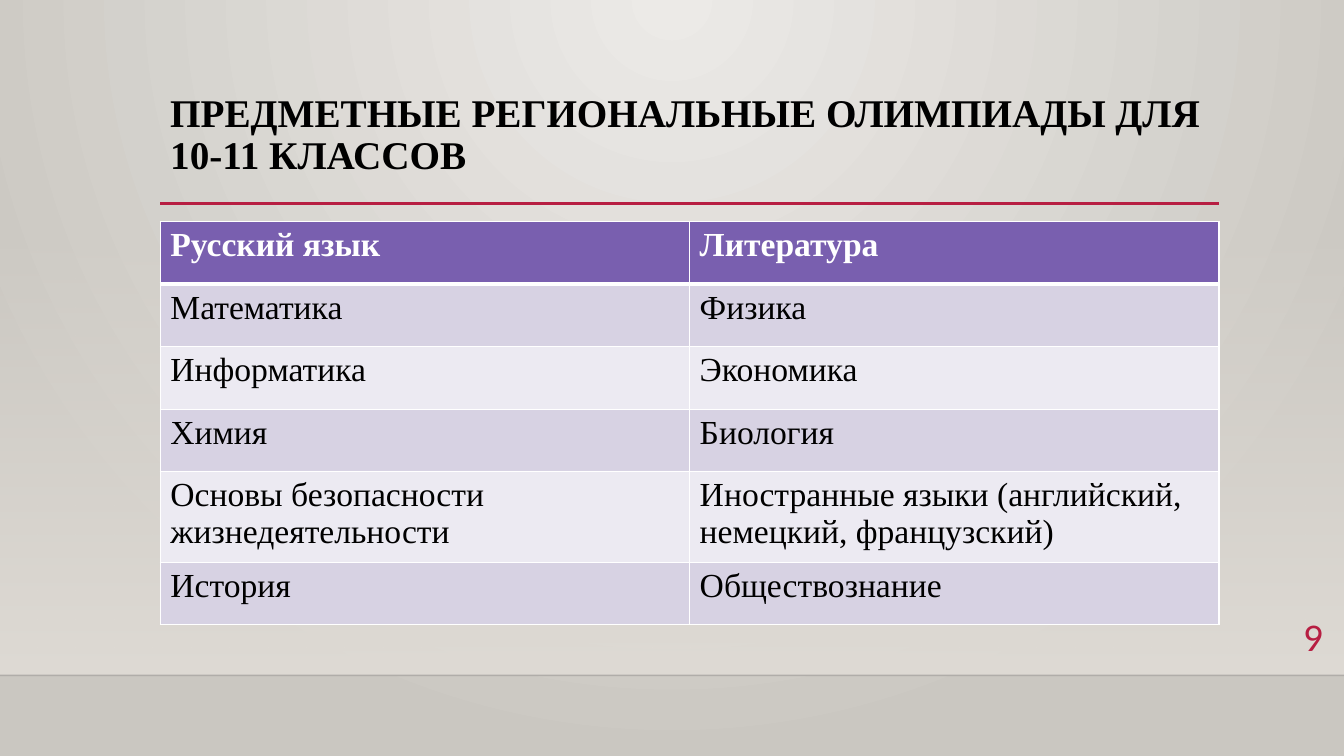
import pptx
import pptx.dml.color
import pptx.enum.shapes
import pptx.enum.text
import pptx.oxml
import pptx.oxml.ns
import pptx.util
from pptx.util import Inches

TITLE = "ПРЕДМЕТНЫЕ РЕГИОНАЛЬНЫЕ ОЛИМПИАДЫ ДЛЯ 10-11 КЛАССОВ"
SUBJECTS = [
    ("Русский язык", "Литература"),
    ("Математика", "Физика"),
    ("Информатика", "Экономика"),
    ("Химия", "Биология"),
    ("Основы безопасности жизнедеятельности",
     "Иностранные языки (английский, немецкий, французский)"),
    ("История", "Обществознание"),
]
PAGE_NUMBER = "9"

COLORS = {
    "center": "ECEAE7", "edge": "CAC7C1", "haze": "DFDBD5",
    "floor": "000001", "accent": "B71E42", "text": "000000",
    "white": "FFFFFF", "header": "795FAF", "odd": "D7D2E3", "even": "ECEAF2",
}
SERIF = "Times New Roman"
SLIDE_WIDTH, SLIDE_HEIGHT = 13.33, 7.5
LEFT, CONTENT_WIDTH = 1.59, 10.5
HAZE_TOP, FLOOR_TOP = 2.21, 6.7
ROW_HEIGHT = 0.62
HEADER_RULE, CELL_RULE = 3, 1


def rgb(name):
    return pptx.dml.color.RGBColor.from_string(COLORS[name])


def xml(text):
    return pptx.oxml.parse_xml(text.replace(" ", f" {pptx.oxml.ns.nsdecls('a')} ", 1))


def set_gradient(fill, stops, direction):
    """Fill with (position, colour, opacity) stops, all in percent."""
    fill.gradient()
    gradient = fill._fill._gradFill
    stop_xml = "".join(
        f'<a:gs pos="{position * 1000}"><a:srgbClr val="{COLORS[color]}">'
        f'<a:alpha val="{opacity * 1000}"/></a:srgbClr></a:gs>'
        for position, color, opacity in stops)
    source = xml(f'<a:gradFill rotWithShape="1"><a:gsLst>{stop_xml}</a:gsLst>'
                 f'{direction}</a:gradFill>')
    gradient.getparent().replace(gradient, source)


def write(frame, text, size, color, font=SERIF, bold=False, align=None, spacing=None):
    frame.word_wrap = True
    para = frame.paragraphs[0]
    para.alignment = align
    para.line_spacing = spacing
    span = para.add_run()
    span.text = text
    span.font.size = pptx.util.Pt(size)
    span.font.name = font
    span.font.bold = bold
    span.font.color.rgb = rgb(color)


def add_text(page, left, top, width, height, text, **style):
    box = page.shapes.add_textbox(Inches(left), Inches(top), Inches(width), Inches(height))
    write(box.text_frame, text, **style)


def add_rule(page, left, right, y, color, width, opacity=100):
    rule = page.shapes.add_connector(
        pptx.enum.shapes.MSO_CONNECTOR.STRAIGHT,
        Inches(left), Inches(y), Inches(right), Inches(y))
    rule.line.color.rgb = rgb(color)
    rule.line.width = pptx.util.Pt(width)
    if opacity < 100:
        paint = rule.line.fill._xPr.find(".//" + pptx.oxml.ns.qn("a:srgbClr"))
        paint.append(xml(f'<a:alpha val="{opacity * 1000}"/>'))
    rule._element.spPr.append(xml("<a:effectLst />"))


def set_borders(cell, top, bottom):
    properties = cell._tc.get_or_add_tcPr()
    widths = {"lnL": CELL_RULE, "lnR": CELL_RULE, "lnT": top, "lnB": bottom}
    for index, (side, width) in enumerate(widths.items()):
        properties.insert(index, xml(
            f'<a:{side} w="{pptx.util.Pt(width)}"><a:solidFill>'
            f'<a:srgbClr val="{COLORS["white"]}"/></a:solidFill></a:{side}>'))


def add_subject_table(page):
    frame = page.shapes.add_table(
        len(SUBJECTS), 2, Inches(LEFT), Inches(2.2),
        Inches(CONTENT_WIDTH), Inches(ROW_HEIGHT * len(SUBJECTS)))
    for row, subjects in enumerate(SUBJECTS):
        frame.table.rows[row].height = Inches(ROW_HEIGHT)
        is_header = row == 0
        shade = "header" if is_header else ("even", "odd")[row % 2]
        for column, subject in enumerate(subjects):
            cell = frame.table.cell(row, column)
            cell.fill.solid()
            cell.fill.fore_color.rgb = rgb(shade)
            set_borders(cell, HEADER_RULE if row == 1 else CELL_RULE,
                        HEADER_RULE if is_header else CELL_RULE)
            write(cell.text_frame, subject, size=24, bold=is_header,
                  color="white" if is_header else "text")


def main():
    deck = pptx.Presentation()
    deck.slide_width, deck.slide_height = Inches(SLIDE_WIDTH), Inches(SLIDE_HEIGHT)
    page = deck.slides.add_slide(deck.slide_layouts[6])

    set_gradient(page.background.fill, [(0, "center", 100), (100, "edge", 100)],
                 '<a:path path="circle"><a:fillToRect l="43000" t="0" r="43000" '
                 'b="100000"/></a:path>')
    haze = page.shapes.add_shape(
        pptx.enum.shapes.MSO_SHAPE.RECTANGLE, 0, Inches(HAZE_TOP),
        Inches(SLIDE_WIDTH), Inches(FLOOR_TOP - HAZE_TOP))
    haze.shadow.inherit = False
    haze.line.fill.background()
    set_gradient(haze.fill, [(0, "haze", 0), (100, "haze", 100)],
                 '<a:lin ang="5400000" scaled="0"/>')

    add_rule(page, 0, SLIDE_WIDTH, FLOOR_TOP, "floor", 1, opacity=20)
    add_rule(page, LEFT, LEFT + CONTENT_WIDTH, 2.02, "accent", 2.5)
    add_text(page, LEFT, 0.88, CONTENT_WIDTH, 1.15, TITLE,
             size=28, color="text", bold=True, spacing=0.9)
    add_subject_table(page)
    add_text(page, 12.33, 6.03, 0.89, 0.55, PAGE_NUMBER, size=28, color="accent",
             font="Calibri", align=pptx.enum.text.PP_ALIGN.RIGHT)
    deck.save("out.pptx")


if __name__ == "__main__":
    main()
